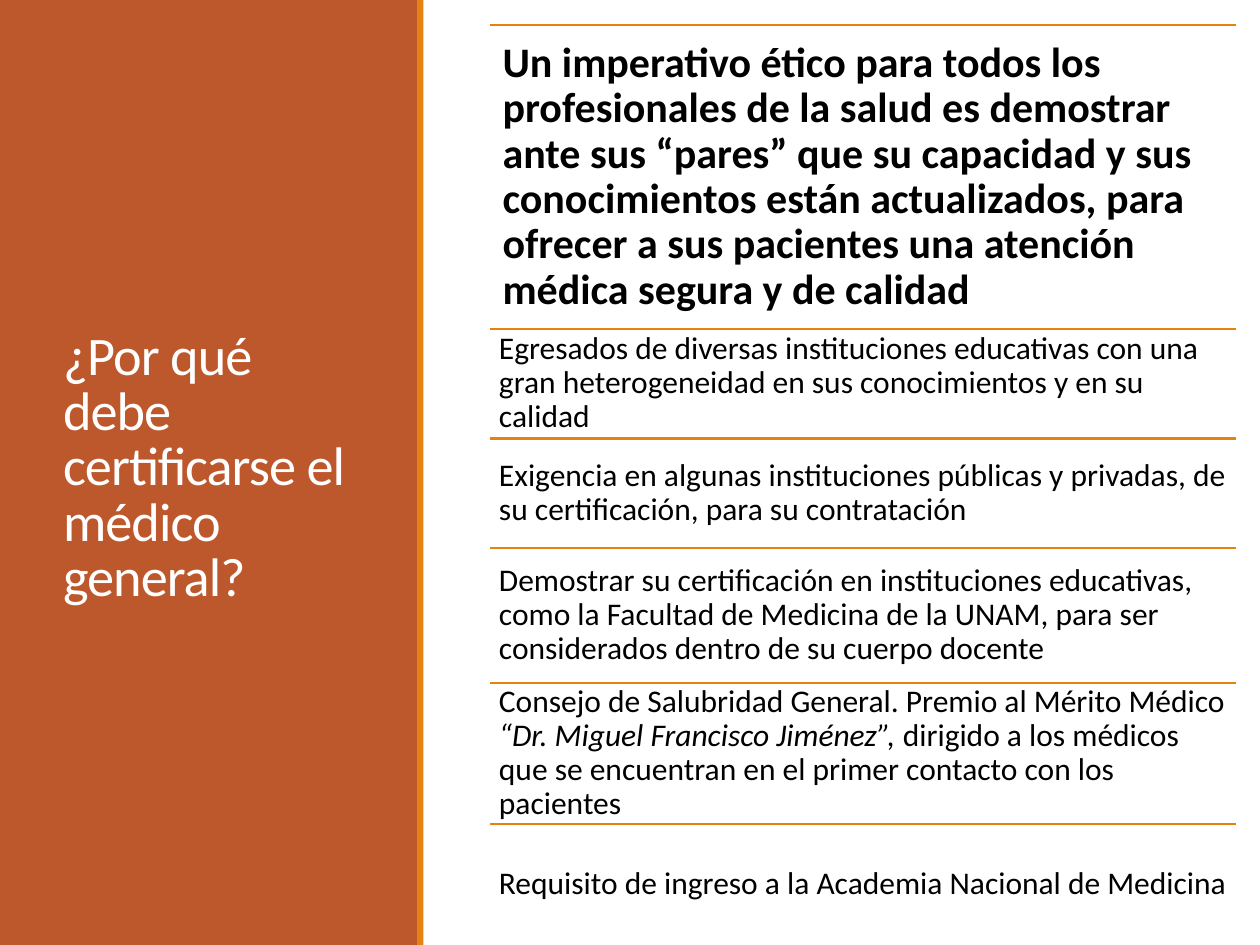
from dataclasses import dataclass

from lxml import etree
from pptx import Presentation
from pptx.dml.color import RGBColor
from pptx.enum import shapes, text
from pptx.oxml.ns import qn
from pptx.util import Inches, Pt

COLORS = {"panel": "BD582C", "accent": "E48312", "paper": "FFFFFF", "ink": "000000"}
FONT = "Calibri"
LEFT, WIDTH, SLIDE_H = 3.89, 5.92, 7.5


@dataclass
class Reason:
    top: float
    runs: list[tuple[str, bool]]  # wording, italic
    size: float = 18
    bold: bool = False
    inset: float = 0.07


REASONS = [
    Reason(0.2, [("Un imperativo ético para todos los profesionales de la salud es "
                  "demostrar ante sus “pares” que su capacidad y sus conocimientos "
                  "están actualizados, para ofrecer a sus pacientes una atención "
                  "médica segura y de calidad", False)], size=24, bold=True, inset=0.1),
    Reason(2.61, [("Egresados de diversas instituciones educativas con una gran "
                   "heterogeneidad en sus conocimientos y en su calidad", False)]),
    Reason(3.48, [("Exigencia en algunas instituciones públicas y privadas, de su "
                   "certificación, para su contratación", False)]),
    Reason(4.35, [("Demostrar su certificación en instituciones educativas, como la "
                   "Facultad de Medicina de la UNAM, para ser considerados dentro de "
                   "su cuerpo docente", False)]),
    Reason(5.42, [("Consejo de Salubridad General. Premio al Mérito Médico ", False),
                  ("“Dr. Miguel Francisco Jiménez”,", True),
                  (" dirigido a los médicos que se encuentran en el primer contacto "
                   "con los pacientes", False)]),
    Reason(6.54, [("Requisito de ingreso a la Academia Nacional de Medicina", False)]),
]


def rgb(name: str) -> RGBColor:
    return RGBColor.from_string(COLORS[name])


def write(sp, runs, *, size: float, color: str, spacing: float, bold: bool = False,
          inset: float = 0.1, tracking: int = 0) -> None:
    """Fill a shape with one left-aligned, vertically centred paragraph."""
    tf = sp.text_frame
    tf.word_wrap = True
    tf.auto_size = text.MSO_AUTO_SIZE.NONE
    tf.vertical_anchor = text.MSO_ANCHOR.MIDDLE
    tf.margin_left = tf.margin_right = tf.margin_top = tf.margin_bottom = Inches(inset)
    p = tf.paragraphs[0]
    p.alignment = text.PP_ALIGN.LEFT
    p.line_spacing = spacing
    for wording, italic in runs:
        r = p.add_run()
        r.text = wording
        r.font.name, r.font.size = FONT, Pt(size)
        r.font.bold, r.font.italic = bold, italic
        r.font.color.rgb = rgb(color)
        if tracking:
            r.font._element.set("spc", str(tracking))


def add_band(slide, left: float, width: float, color: str) -> None:
    """Draw a full-height vertical band."""
    sp = slide.shapes.add_shape(shapes.MSO_SHAPE.RECTANGLE, Inches(left), 0,
                                Inches(width), Inches(SLIDE_H))
    sp.shadow.inherit = False
    sp.fill.solid()
    sp.fill.fore_color.rgb = rgb(color)
    sp.line.fill.background()


def add_rule(slide, top: float) -> None:
    line = slide.shapes.add_connector(shapes.MSO_CONNECTOR.STRAIGHT, Inches(LEFT),
                                      Inches(top), Inches(LEFT + WIDTH), Inches(top))
    line.line.color.rgb = rgb("accent")
    line.line.width = Pt(1.25)
    etree.SubElement(line._element.spPr, qn("a:effectLst"))


def add_reason(slide, reason: Reason, bottom: float) -> None:
    add_rule(slide, reason.top)
    sp = slide.shapes.add_textbox(Inches(LEFT), Inches(reason.top), Inches(WIDTH),
                                  Inches(bottom - reason.top))
    write(sp, reason.runs, size=reason.size, color="ink", spacing=0.9,
          bold=reason.bold, inset=reason.inset)


def main() -> None:
    prs = Presentation()
    prs.slide_width, prs.slide_height = Inches(10), Inches(SLIDE_H)
    slide = prs.slides.add_slide(prs.slide_layouts[5])
    slide.background.fill.solid()
    slide.background.fill.fore_color.rgb = rgb("paper")

    add_band(slide, 0, 3.32, "panel")
    add_band(slide, 3.31, 0.05, "accent")

    title = slide.shapes.title
    title.left, title.top = Inches(0.4), Inches(0.57)
    title.width, title.height = Inches(2.53), Inches(6.31)
    slide.shapes._spTree.append(title._element)  # bring in front of the panel
    write(title, [("¿Por qué debe certificarse el médico general?", False)],
          size=31, color="paper", spacing=0.85, tracking=-50)

    bottoms = [reason.top for reason in REASONS[1:]] + [SLIDE_H]
    for reason, bottom in zip(REASONS, bottoms):
        add_reason(slide, reason, bottom)

    prs.save("out.pptx")


if __name__ == "__main__":
    main()
